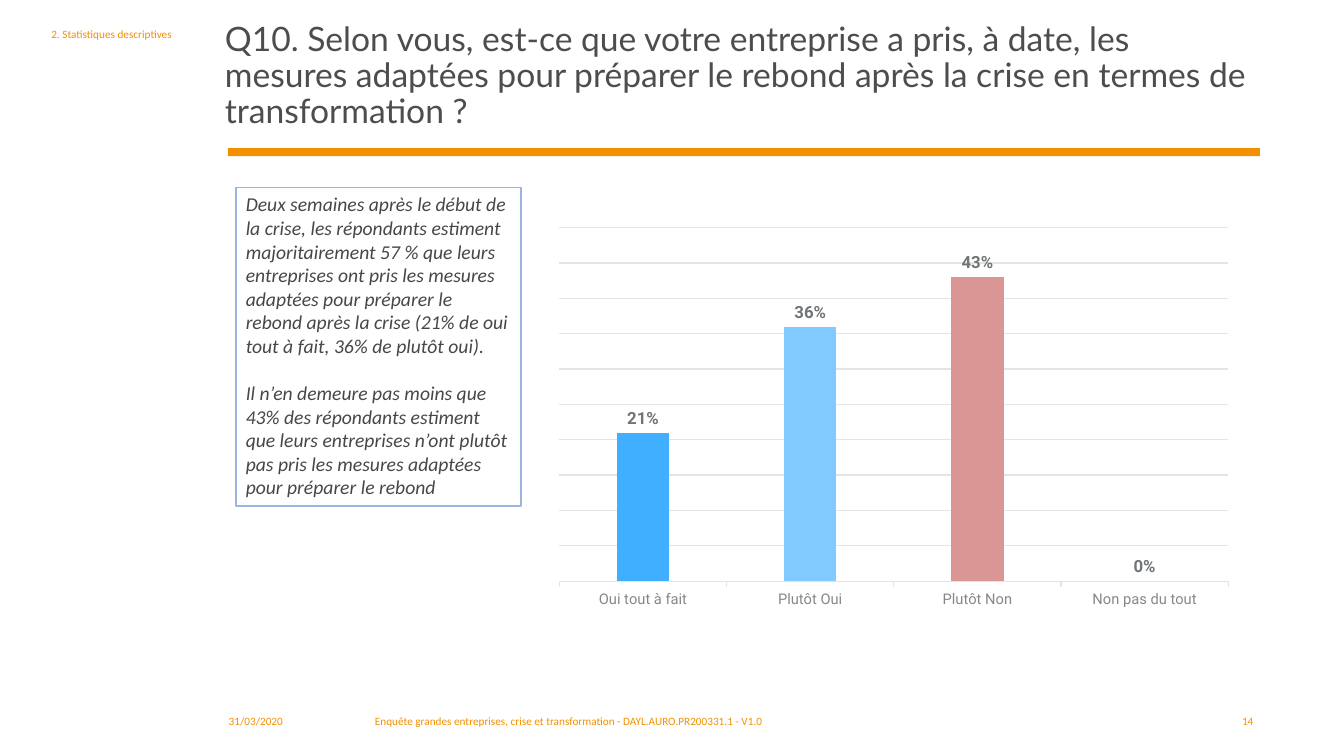
from dataclasses import dataclass

from lxml import etree
from pptx import Presentation
from pptx.chart.data import CategoryChartData
from pptx.dml.color import RGBColor
from pptx.enum.chart import XL_CHART_TYPE, XL_LABEL_POSITION, XL_TICK_LABEL_POSITION, XL_TICK_MARK
from pptx.enum.shapes import MSO_SHAPE
from pptx.enum.text import MSO_ANCHOR, MSO_AUTO_SIZE, PP_ALIGN
from pptx.oxml.ns import qn
from pptx.slide import Slide
from pptx.util import Inches, Pt

COLUMN = XL_CHART_TYPE.COLUMN_CLUSTERED
OUTSIDE_END = XL_LABEL_POSITION.OUTSIDE_END
LOW = XL_TICK_LABEL_POSITION.LOW
TICK_OUT, TICK_NONE = XL_TICK_MARK.OUTSIDE, XL_TICK_MARK.NONE
RECTANGLE = MSO_SHAPE.RECTANGLE
TOP, BOTTOM = MSO_ANCHOR.TOP, MSO_ANCHOR.BOTTOM
NO_FIT = MSO_AUTO_SIZE.NONE
LEFT, RIGHT = PP_ALIGN.LEFT, PP_ALIGN.RIGHT

SLIDE_WIDTH, SLIDE_HEIGHT = Inches(13.33), Inches(7.5)
ORANGE, WHITE, TITLE_GREY, TEXT_GREY = "F39000", "FFFFFF", "4D4D4D", "454748"
GRID_GREY, AXIS_GREY, VALUE_GREY, NOTE_BORDER = "E3E4E4", "85888A", "727577", "9BB5DF"


@dataclass(frozen=True)
class Area:
    """Position and size in percent of the slide's width and height."""
    x: float
    y: float
    w: float
    h: float

    def box(self) -> tuple[int, int, int, int]:
        return (int(SLIDE_WIDTH * self.x / 100), int(SLIDE_HEIGHT * self.y / 100),
                int(SLIDE_WIDTH * self.w / 100), int(SLIDE_HEIGHT * self.h / 100))


@dataclass(frozen=True)
class Label:
    text: str
    area: Area
    align: PP_ALIGN = LEFT


@dataclass(frozen=True)
class Answer:
    name: str
    share: float
    color: str


FOOTER_Y, FOOTER_H = 93.87, 4.8
TITLE_AREA = Area(15.98, 2.93, 77.8, 15.07)
RULE_AREA = Area(16.95, 19.6, 76.8, 1.07)
NOTE_AREA = Area(17.55, 24.8, 21.23, 42.13)
CHART_AREA = Area(40.59, 29.07, 51.84, 52.53)
PLOT_SHARES = {"x": 0.02, "y": 0.02, "w": 0.96, "h": 0.89}

TITLE = ("Q10. Selon vous, est-ce que votre entreprise a pris, à date, les mesures adaptées "
         "pour préparer le rebond après la crise en termes de transformation ?")
LABELS = [
    Label("2. Statistiques descriptives", Area(3.08, 2.93, 12.68, 18.27)),
    Label("31/03/2020", Area(16.28, FOOTER_Y, 10.65, FOOTER_H)),
    Label("Enquête grandes entreprises, crise et transformation - DAYL.AURO.PR200331.1 - V1.0",
          Area(27.16, FOOTER_Y, 41.04, FOOTER_H)),
    Label("14", Area(84.85, FOOTER_Y, 9.15, FOOTER_H), RIGHT),
]
NOTE = [
    "Deux semaines après le début de la crise, les répondants estiment majoritairement 57 % "
    "que leurs entreprises ont pris les mesures adaptées pour préparer le rebond après la "
    "crise (21% de oui tout à fait, 36% de plutôt oui).",
    "Il n’en demeure pas moins que 43% des répondants estiment que leurs entreprises n’ont "
    "plutôt pas pris les mesures adaptées pour préparer le rebond",
]
ANSWERS = [
    Answer("Oui tout à fait", 0.21, "40AFFF"),
    Answer("Plutôt Oui", 0.36, "80CAFF"),
    Answer("Plutôt Non", 0.43, "D99694"),
    Answer("Non pas du tout", 0, "C3D3EC"),
]


def rgb(color: str) -> RGBColor:
    return RGBColor.from_string(color)


def style_font(font, name: str, size: float, color: str, bold=False, italic=False) -> None:
    font.name, font.size = name, Pt(size)
    font.bold, font.italic = bold, italic
    font.color.rgb = rgb(color)


def style_line(line, color: str, width: float) -> None:
    line.color.rgb = rgb(color)
    line.width = Pt(width)


def add_title(slide: Slide) -> None:
    title = slide.shapes.title
    title.left, title.top, title.width, title.height = TITLE_AREA.box()
    frame = title.text_frame
    frame.text = TITLE
    frame.word_wrap, frame.auto_size = True, NO_FIT
    frame.vertical_anchor = BOTTOM
    question = frame.paragraphs[0]
    question.alignment, question.line_spacing = LEFT, 0.9
    question.space_before = Pt(0)
    style_font(question.runs[0].font, "Lato", 24, TITLE_GREY)


def add_label(slide: Slide, label: Label) -> None:
    frame = slide.shapes.add_textbox(*label.area.box()).text_frame
    frame.word_wrap = True
    frame.text = label.text
    frame.paragraphs[0].alignment = label.align
    style_font(frame.paragraphs[0].runs[0].font, "Calibri", 8, ORANGE)


def add_panel(slide: Slide, area: Area, fill: str):
    panel = slide.shapes.add_shape(RECTANGLE, *area.box())
    panel.shadow.inherit = False
    panel.fill.solid()
    panel.fill.fore_color.rgb = rgb(fill)
    panel.line.fill.background()
    return panel


def add_note(slide: Slide) -> None:
    note = add_panel(slide, NOTE_AREA, WHITE)
    style_line(note.line, NOTE_BORDER, 1)
    frame = note.text_frame
    frame.word_wrap, frame.vertical_anchor = True, TOP
    frame.text = "\n".join(NOTE)
    for index, paragraph in enumerate(frame.paragraphs):
        paragraph.alignment = LEFT
        paragraph.space_before = Pt(17 if index else 0)
        style_font(paragraph.runs[0].font, "Calibri", 14, TEXT_GREY, italic=True)


def place_plot(chart) -> None:
    """Fix the inner plot area as shares of the chart frame."""
    plot_area = chart.element.find(".//" + qn("c:plotArea"))
    layout = plot_area.find(qn("c:layout"))
    if layout is None:
        layout = etree.Element(qn("c:layout"))
        plot_area.insert(0, layout)
    manual = etree.SubElement(layout, qn("c:manualLayout"))
    settings = {"layoutTarget": "inner", "xMode": "edge", "yMode": "edge", **PLOT_SHARES}
    for tag, value in settings.items():
        etree.SubElement(manual, qn("c:" + tag)).set("val", str(value))


def add_answer_chart(slide: Slide) -> None:
    data = CategoryChartData(number_format="0%")
    data.categories = [answer.name for answer in ANSWERS]
    data.add_series("Series 1", [answer.share for answer in ANSWERS])
    chart = slide.shapes.add_chart(COLUMN, *CHART_AREA.box(), data).chart
    chart.has_legend = chart.has_title = False
    style_font(chart.font, "Roboto", 10, TEXT_GREY)
    place_plot(chart)

    # Axes
    answers_axis, share_axis = chart.category_axis, chart.value_axis
    answers_axis.major_tick_mark = TICK_OUT
    answers_axis.minor_tick_mark = TICK_NONE
    answers_axis.tick_label_position = LOW
    style_line(answers_axis.format.line, GRID_GREY, 0.75)
    style_font(answers_axis.tick_labels.font, "Roboto", 10.5, AXIS_GREY)
    share_axis.minimum_scale, share_axis.maximum_scale = 0, 0.5
    share_axis.major_unit = 0.05
    share_axis.has_major_gridlines = True
    style_line(share_axis.major_gridlines.format.line, GRID_GREY, 0.75)
    share_axis.tick_labels.number_format = "0.00%"
    share_axis.tick_labels.number_format_is_linked = False
    share_axis.visible = False

    # Columns and their values
    plot = chart.plots[0]
    plot.gap_width, plot.overlap = 219, -27
    plot.vary_by_categories = False
    shares = plot.series[0]
    shares.format.fill.solid()
    shares.format.fill.fore_color.rgb = rgb(ORANGE)
    for index, answer in enumerate(ANSWERS):
        fill = shares.points[index].format.fill
        fill.solid()
        fill.fore_color.rgb = rgb(answer.color)
    values = shares.data_labels
    values.show_value, values.position = True, OUTSIDE_END
    values.number_format, values.number_format_is_linked = "0%", False
    style_font(values.font, "Roboto", 12, VALUE_GREY, bold=True)


def main() -> None:
    presentation = Presentation()
    presentation.slide_width, presentation.slide_height = SLIDE_WIDTH, SLIDE_HEIGHT
    slide = presentation.slides.add_slide(presentation.slide_layouts[5])
    add_panel(slide, RULE_AREA, ORANGE)
    add_title(slide)
    for label in LABELS:
        add_label(slide, label)
    add_answer_chart(slide)
    add_note(slide)
    presentation.save("out.pptx")


if __name__ == "__main__":
    main()
